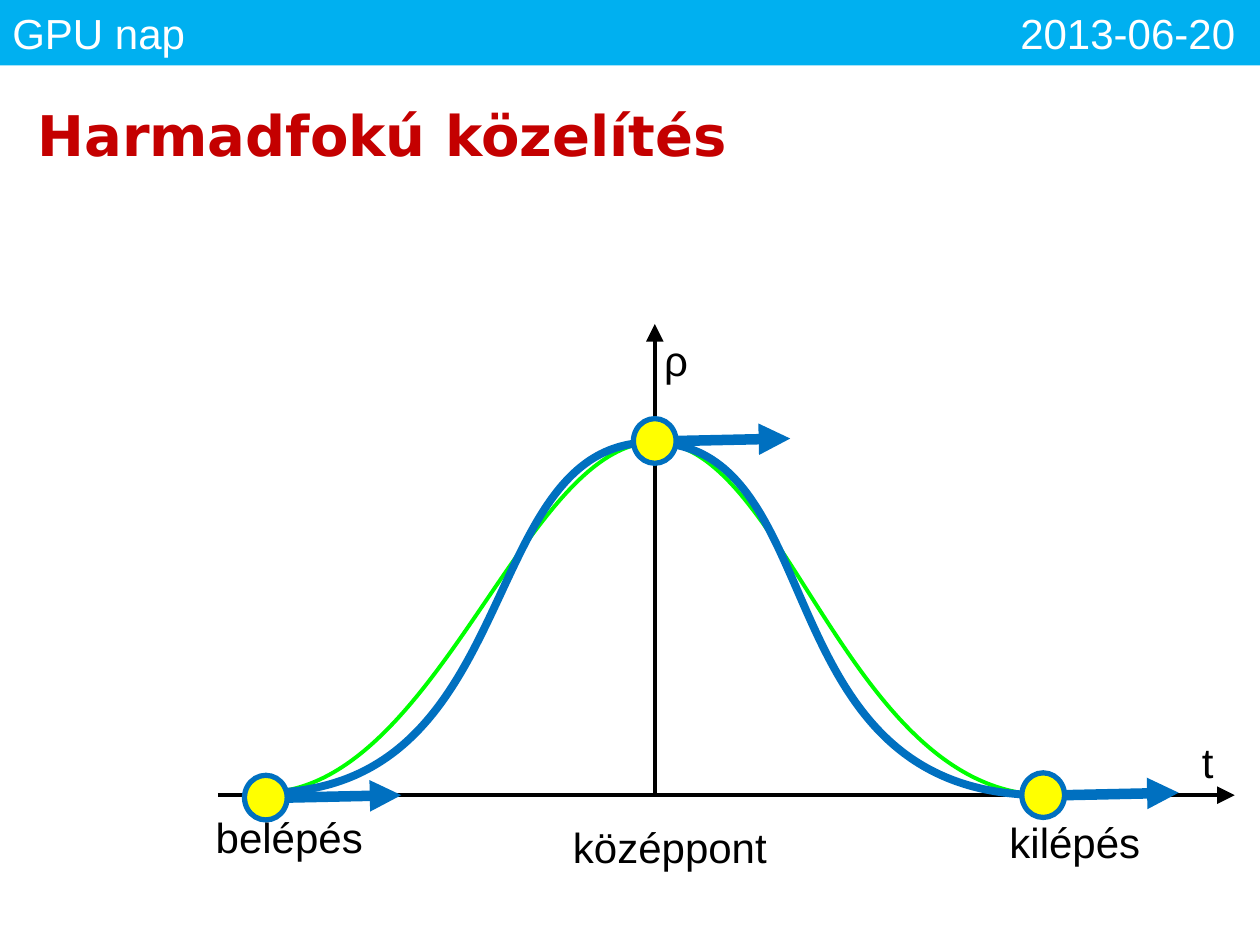
"""Build the slide on the cubic approximation of a density curve."""
from lxml.etree import SubElement
from pptx import Presentation
from pptx.dml.color import RGBColor
from pptx.enum.shapes import MSO_CONNECTOR, MSO_SHAPE
from pptx.enum.text import MSO_ANCHOR as Anchor, MSO_AUTO_SIZE as AutoSize, PP_ALIGN as Align
from pptx.oxml.ns import qn
from pptx.util import Cm, Pt

BLACK = RGBColor(0x00, 0x00, 0x00)
WHITE = RGBColor(0xFF, 0xFF, 0xFF)
SKY = RGBColor(0x00, 0xB0, 0xF0)
BLUE = RGBColor(0x00, 0x70, 0xC0)
RED = RGBColor(0xC4, 0x00, 0x00)
GREEN = RGBColor(0x00, 0xFF, 0x00)
YELLOW = RGBColor(0xFF, 0xFF, 0x00)

WIDTH, HEIGHT = 25.4, 19.05
BASE_Y, CENTRE_X = 16.03, 13.2
GREEN_CURVE = [(5.31, 15.98), (8.81, 15.95), (10.57, 8.89), (13.21, 8.92),
               (15.82, 8.92), (17.09, 16), (21.11, BASE_Y)]
BLUE_CURVE = [(5.23, 15.98), (10.62, 16.08), (9.53, 8.92), (13.13, 8.92),
              (16.84, 8.94), (15.32, 16.05), (21.06, BASE_Y)]
MARKERS = [(5.36, 16.08), (CENTRE_X, 8.89), (21.03, BASE_Y)]
LABELS = [("ρ", 13.14, 6.61, 0.99), ("t", 23.98, 14.73, 0.74),
          ("középpont", 11.3, 16.43, 4.47), ("belépés", 4.1, 16.24, 3.51),
          ("kilépés", 20.1, 16.33, 3.18)]


class SlideBuilder:
    def __init__(self, slide, font="Arial", size=24):
        self.slide, self.font, self.size = slide, font, size

    def add_run(self, paragraph, text, color, size=None, font=None, bold=False):
        run = paragraph.add_run()
        run.text = text
        run.font.name = font or self.font
        run.font.size = Pt(size or self.size)
        run.font.bold = bold
        run.font.color.rgb = color

    def add_header(self, left_text, right_text, height):
        shape = self.slide.shapes.add_shape(MSO_SHAPE.RECTANGLE, 0, 0, Cm(WIDTH), Cm(height))
        shape.shadow.inherit = False
        shape.fill.solid()
        shape.fill.fore_color.rgb = SKY
        shape.line.fill.background()
        shape.text_frame.vertical_anchor = Anchor.MIDDLE
        paragraph = shape.text_frame.paragraphs[0]
        paragraph.alignment = Align.LEFT
        tabs = SubElement(paragraph._p.get_or_add_pPr(), qn("a:tabLst"))
        SubElement(tabs, qn("a:tab"), pos=str(Cm(24.65)), algn="r")
        self.add_run(paragraph, f"{left_text}\t{right_text}", WHITE)

    def set_title(self, text):
        title = self.slide.shapes.title
        title.left, title.top, title.width, title.height = Cm(0.5), Cm(1.33), Cm(24.4), Cm(2.75)
        title.text_frame.vertical_anchor = Anchor.MIDDLE
        paragraph = title.text_frame.paragraphs[0]
        paragraph.alignment = Align.LEFT
        self.add_run(paragraph, text, RED, 32, "DejaVu Sans", True)

    def add_arrow(self, shapes, start, end, color, width, head="med"):
        arrow = shapes.add_connector(
            MSO_CONNECTOR.STRAIGHT, *(Cm(value) for value in (*start, *end)))
        arrow.line.color.rgb = color
        arrow.line.width = Pt(width)
        properties = arrow.element.spPr
        SubElement(properties.find(qn("a:ln")), qn("a:tailEnd"),
                   type="triangle", w=head, len=head)
        SubElement(properties, qn("a:effectLst"))

    def add_axis(self, start, end):
        self.add_arrow(self.slide.shapes, start, end, BLACK, 2, "lg")

    def add_curve(self, points, color, width):
        start, *others = [(Cm(x), Cm(y)) for x, y in points]
        builder = self.slide.shapes.build_freeform(*start)
        builder.add_line_segments(others, close=False)
        curve = builder.convert_to_shape()
        outline = next(curve.element.iter(qn("a:path")))
        segments = outline.findall(qn("a:lnTo"))
        for first in range(0, len(segments), 3):
            bezier = SubElement(outline, qn("a:cubicBezTo"))
            for segment in segments[first:first + 3]:
                bezier.append(segment[0])
                outline.remove(segment)
        curve.shadow.inherit = False
        curve.fill.background()
        curve.line.color.rgb = color
        curve.line.width = Pt(width)

    def add_marker(self, x, y, width=0.86, height=0.9):
        group = self.slide.shapes.add_group_shape()
        dot = group.shapes.add_shape(MSO_SHAPE.OVAL, Cm(x - width / 2), Cm(y - height / 2),
                                     Cm(width), Cm(height))
        dot.shadow.inherit = False
        dot.fill.solid()
        dot.fill.fore_color.rgb = YELLOW
        dot.line.color.rgb = BLUE
        dot.line.width = Pt(3)
        self.add_arrow(group.shapes, (x + width / 2, y), (x + 2.73, y - 0.05), BLUE, 6)

    def add_label(self, text, left, top, width):
        box = self.slide.shapes.add_textbox(Cm(left), Cm(top), Cm(width), Cm(1.27))
        box.text_frame.word_wrap = False
        box.text_frame.auto_size = AutoSize.SHAPE_TO_FIT_TEXT
        self.add_run(box.text_frame.paragraphs[0], text, BLACK)


def main():
    presentation = Presentation()
    presentation.slide_width, presentation.slide_height = Cm(WIDTH), Cm(HEIGHT)
    builder = SlideBuilder(presentation.slides.add_slide(presentation.slide_layouts[5]))
    builder.add_header("GPU nap", "2013-06-20", 1.32)
    builder.set_title("Harmadfokú közelítés")
    builder.add_axis((CENTRE_X, BASE_Y), (CENTRE_X, 6.53))
    builder.add_axis((4.39, BASE_Y), (24.89, BASE_Y))
    builder.add_curve(GREEN_CURVE, GREEN, 2.25)
    builder.add_curve(BLUE_CURVE, BLUE, 4.5)
    for marker in MARKERS:
        builder.add_marker(*marker)
    for label in LABELS:
        builder.add_label(*label)
    presentation.save("out.pptx")


if __name__ == "__main__":
    main()
